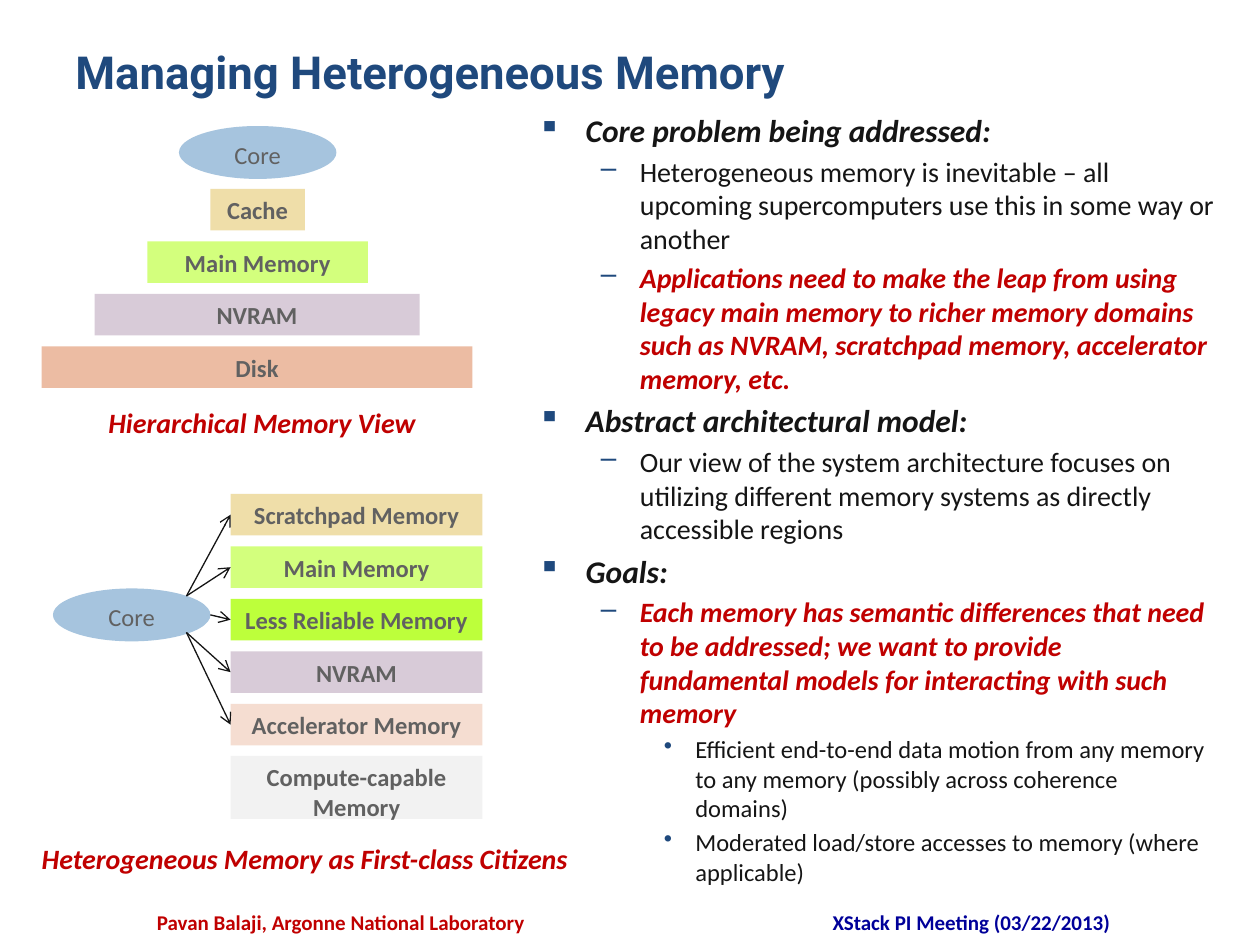
from lxml.etree import SubElement
from pptx import Presentation
from pptx.dml.color import RGBColor
from pptx.enum.shapes import MSO_CONNECTOR, MSO_SHAPE
from pptx.enum.text import MSO_ANCHOR, PP_ALIGN
from pptx.oxml.ns import qn
from pptx.util import Inches, Pt

COLORS = {
    "navy": "1F497D", "ink": "151515", "red": "C00000", "blue": "000099",
    "gray": "616161", "core": "A6C4DE", "sand": "EFDEA9", "lime": "D3FF7D",
    "green": "BDFF3B", "mauve": "D8CBD8", "orange": "ECBCA3",
    "peach": "F5DDD1", "pale": "F2F2F2",
}

deck = Presentation()
deck.slide_width, deck.slide_height = Inches(10), Inches(7.5)
page = deck.slides.add_slide(deck.slide_layouts[6])


def write(para, text, color, **formats):
    span = para.add_run()
    span.text = text
    span.font.color.rgb = RGBColor.from_string(COLORS[color])
    for name, value in {"name": "Calibri", **formats}.items():
        setattr(span.font, name, value)


def add_block(kind, place, text, fill, bold=True):
    block = page.shapes.add_shape(kind, *map(Inches, place))
    block.shadow.inherit = False
    block.fill.solid()
    block.fill.fore_color.rgb = RGBColor.from_string(COLORS[fill])
    block.line.fill.background()
    block.text_frame.word_wrap = True
    block.text_frame.vertical_anchor = MSO_ANCHOR.TOP
    para = block.text_frame.paragraphs[0]
    para.alignment = PP_ALIGN.CENTER
    write(para, text, "gray", size=Pt(14), bold=bold)
    return block


title_format = {"name": "Roboto", "size": Pt(26), "bold": True}
footer_format = {"size": Pt(12), "bold": True}
caption_format = {"size": Pt(16), "bold": True, "italic": True}
labels = [
    ((0.5, 0.3, 9, 0.87), "Managing Heterogeneous Memory", "navy", PP_ALIGN.LEFT, title_format),
    ((1.08, 7.17, 3.25, 0.25), "Pavan Balaji, Argonne National Laboratory", "red", PP_ALIGN.CENTER, footer_format),
    ((5.75, 7.17, 3.92, 0.25), "XStack PI Meeting (03/22/2013)", "blue", PP_ALIGN.CENTER, footer_format),
    ((0.58, 3.17, 3, 0.37), "Hierarchical Memory View", "red", PP_ALIGN.CENTER, caption_format),
    ((0.17, 6.63, 4.5, 0.37), "Heterogeneous Memory as First-class Citizens", "red", PP_ALIGN.CENTER, caption_format),
]
for place, text, color, alignment, formats in labels:
    box = page.shapes.add_textbox(*map(Inches, place))
    box.text_frame.word_wrap = True
    para = box.text_frame.paragraphs[0]
    para.alignment = alignment
    write(para, text, color, **formats)

levels = [
    {"margin": 0.38, "indent": -0.38, "bullet": "▪", "size": 18},
    {"margin": 0.81, "indent": -0.31, "bullet": "–", "size": 16},
    {"margin": 1.25, "indent": -0.25, "bullet": "•", "size": 14},
]
points = [
    (0, "Core problem being addressed:", "ink", True),
    (1, "Heterogeneous memory is inevitable – all upcoming supercomputers use this in some way or another", "ink", False),
    (1, "Applications need to make the leap from using legacy main memory to richer memory domains such as NVRAM, "
        "scratchpad memory, accelerator memory, etc.", "red", True),
    (0, "Abstract architectural model:", "ink", True),
    (1, "Our view of the system architecture focuses on utilizing different memory systems as directly "
        "accessible regions", "ink", False),
    (0, "Goals:", "ink", True),
    (1, "Each memory has semantic differences that need to be addressed; we want to provide fundamental models "
        "for interacting with such memory", "red", True),
    (2, "Efficient end-to-end data motion from any memory to any memory (possibly across coherence domains)", "ink", False),
    (2, "Moderated load/store accesses to memory (where applicable)", "ink", False),
]
body = page.shapes.add_textbox(Inches(4.17), Inches(0.83), Inches(5.58), Inches(6.33))
body.text_frame.word_wrap = True
for index, (depth, text, color, strong) in enumerate(points):
    level = levels[depth]
    para = body.text_frame.add_paragraph() if index else body.text_frame.paragraphs[0]
    para.level = depth
    properties = para._p.get_or_add_pPr()
    properties.set("marL", str(Inches(level["margin"])))
    properties.set("indent", str(Inches(level["indent"])))
    bullet_color = SubElement(properties, qn("a:buClr"))
    SubElement(bullet_color, qn("a:srgbClr"), val=COLORS["navy"])
    SubElement(properties, qn("a:buChar"), char=level["bullet"])
    para.space_before = Pt(level["size"] * 0.2 if index else 0)
    write(para, text, color, size=Pt(level["size"]), bold=strong, italic=strong)

pitch = 5 / 12
hierarchy = [
    ("Cache", "sand", 1.67, 0.75),
    ("Main Memory", "lime", 1.17, 1.75),
    ("NVRAM", "mauve", 0.75, 2.58),
    ("Disk", "orange", 0.33, 3.42),
]
add_block(MSO_SHAPE.OVAL, (1.42, 1, 1.25, 0.42), "Core", "core", bold=False)
for row, (text, fill, left, width) in enumerate(hierarchy):
    add_block(MSO_SHAPE.RECTANGLE, (left, 1.5 + row * pitch, width, 0.33), text, fill)

regions = [
    ("Scratchpad Memory", "sand", (1.48, 4.73)),
    ("Main Memory", "lime", (1.48, 4.73)),
    ("Less Reliable Memory", "green", (1.67, 4.88)),
    ("NVRAM", "mauve", (1.48, 5.02)),
    ("Accelerator Memory", "peach", (1.48, 5.02)),
]
add_block(MSO_SHAPE.OVAL, (0.42, 4.67, 1.25, 0.42), "Core", "core", bold=False)
for row, (text, fill, start) in enumerate(regions):
    region = add_block(MSO_SHAPE.RECTANGLE, (1.83, 3.92 + row * pitch, 2, 0.33), text, fill)
    begin = [Inches(value) for value in start]
    arrow = page.shapes.add_connector(MSO_CONNECTOR.STRAIGHT, *begin, *begin)
    arrow.end_connect(region, 1)
    arrow.line.width = Pt(0.75)
    arrow.line.color.rgb = RGBColor.from_string(COLORS["ink"])
    SubElement(arrow.line._get_or_add_ln(), qn("a:tailEnd"), type="arrow")
    SubElement(arrow._element.spPr, qn("a:effectLst"))
add_block(MSO_SHAPE.RECTANGLE, (1.83, 6, 2, 0.5), "Compute-capable Memory", "pale")

deck.save("out.pptx")
